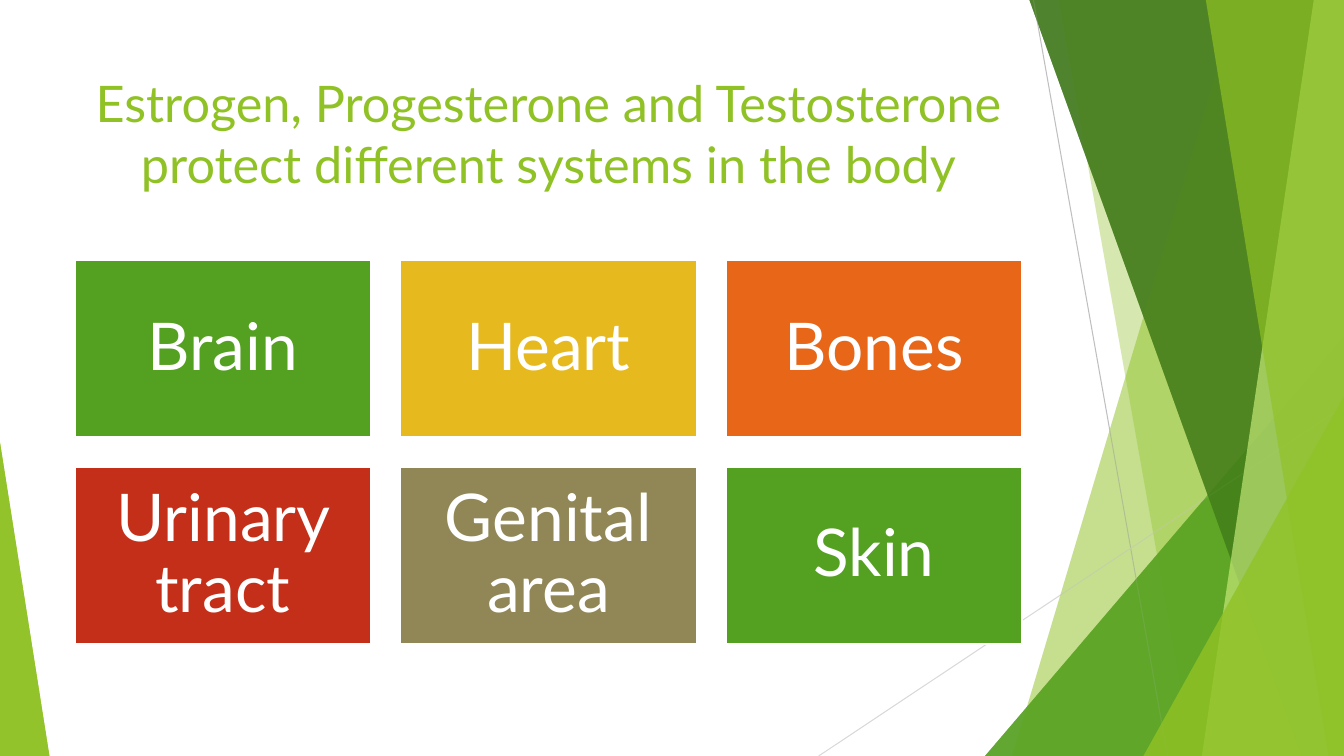
from lxml.etree import SubElement
from pptx import Presentation
from pptx.dml.color import RGBColor
from pptx.enum.shapes import MSO_CONNECTOR, MSO_SHAPE
from pptx.enum.text import MSO_ANCHOR, MSO_AUTO_SIZE, PP_ALIGN
from pptx.oxml.ns import qn
from pptx.util import Inches, Pt

COLORS = {
    "lime": "90C226", "green": "54A021", "forest": "3F7819", "pale": "C0E474",
    "gold": "E6B91E", "orange": "E76618", "red": "C42F1A", "olive": "918655",
    "white": "FFFFFF", "gray": "BFBFBF", "silver": "D9D9D9",
}
FONT = "Lato"
WIDTH, HEIGHT = 13.33, 7.5
BANDS = [
    ("band", 12.28, 10.04, "lime", 30),
    ("band", 10.5, 11.83, "lime", 20),
    ("triangle", (9.77, 3.33, 3.56, 4.17), 1, "green", 72),
    ("band", 10.21, 12.91, "forest", 70),
    ("band", 13.03, 11.92, "pale", 70),
    ("band", 11.96, 13.18, "lime", 65),
    ("triangle", (11.34, 3.93, 1.99, 3.57), 1, "lime", 80),
    ("triangle", (0, 4.39, 0.49, 3.11), 0, "lime", 85),
]
RAYS = [(10.25, 0, 11.58, 7.5, "gray"), (13.33, 4.03, 8.12, 7.5, "silver")]
CARDS = [
    ("Brain", "green"), ("Heart", "gold"), ("Bones", "orange"),
    ("Urinary tract", "red"), ("Genital area", "olive"), ("Skin", "green"),
]


def rgb(name):
    return RGBColor.from_string(COLORS[name])


def add_band(s, x, y, w, h, top_x, bottom_x):
    fb = s.shapes.build_freeform(Inches(x + top_x), Inches(y))
    corners = [(x + w, y), (x + w, y + h), (x + bottom_x, y + h)]
    fb.add_line_segments([(Inches(a), Inches(b)) for a, b in corners])
    return fb.convert_to_shape()


def add_triangle(s, x, y, box, apex):
    left, top, w, h = box
    sp = s.shapes.add_shape(MSO_SHAPE.ISOSCELES_TRIANGLE, Inches(x + left),
                            Inches(y + top), Inches(w), Inches(h))
    sp.adjustments[0] = apex
    return sp


def add_facets(s, x, y, w, h):
    for kind, start, end, color, opacity in BANDS:
        if kind == "band":
            sp = add_band(s, x, y, w, h, start, end)
        else:
            sp = add_triangle(s, x, y, start, end)
        sp.shadow.inherit = False
        sp.line.fill.background()
        sp.fill.solid()
        sp.fill.fore_color.rgb = rgb(color)
        clr = sp.fill._xPr.find(qn("a:solidFill"))[0]
        SubElement(clr, qn("a:alpha"), val=str(opacity * 1000))


def add_rays(s, x, y):
    for x1, y1, x2, y2, color in RAYS:
        ray = s.shapes.add_connector(MSO_CONNECTOR.STRAIGHT, Inches(x + x1), Inches(y + y1),
                                     Inches(x + x2), Inches(y + y2))
        ray.line.color.rgb = rgb(color)
        ray.line.width = Pt(0.75)
        SubElement(ray._element.spPr, qn("a:effectLst"))


def style_text(p, size, color):
    p.alignment = PP_ALIGN.CENTER
    p.font.name = FONT
    p.font.size = Pt(size)
    p.font.color.rgb = rgb(color)


def add_title(s, x, y, w, h):
    title = s.shapes.title
    title.left, title.top, title.width, title.height = map(Inches, (x, y, w, h))
    tf = title.text_frame
    tf.text = "Estrogen, Progesterone and Testosterone protect different systems in the body"
    tf.word_wrap = True
    tf.auto_size = MSO_AUTO_SIZE.NONE
    tf.vertical_anchor = MSO_ANCHOR.TOP
    style_text(tf.paragraphs[0], 36, "lime")


def add_cards(s, x, y, w, h, cols=3, gap=0.29):
    rows = len(CARDS) // cols
    card_w = (w - (cols - 1) * gap) / cols
    card_h = (h - (rows - 1) * gap) / rows
    for i, (label, color) in enumerate(CARDS):
        row, col = divmod(i, cols)
        sp = s.shapes.add_shape(MSO_SHAPE.RECTANGLE, Inches(x + col * (card_w + gap)),
                                Inches(y + row * (card_h + gap)), Inches(card_w), Inches(card_h))
        sp.shadow.inherit = False
        sp.fill.solid()
        sp.fill.fore_color.rgb = rgb(color)
        sp.line.color.rgb = rgb("white")
        sp.line.width = Pt(1.5)
        tf = sp.text_frame
        tf.text = label
        tf.word_wrap = True
        tf.vertical_anchor = MSO_ANCHOR.MIDDLE
        tf.margin_left = tf.margin_right = tf.margin_top = tf.margin_bottom = Inches(0.2)
        p = tf.paragraphs[0]
        style_text(p, 47, "white")
        p.line_spacing = 0.9


def main():
    prs = Presentation()
    prs.slide_width, prs.slide_height = Inches(WIDTH), Inches(HEIGHT)
    s = prs.slides.add_slide(prs.slide_layouts[5])
    add_facets(s, 0, 0, WIDTH, HEIGHT)
    add_rays(s, 0, 0)
    add_facets(s, 0, 0, WIDTH, HEIGHT)
    add_title(s, 0.74, 0.67, 9.4, 1.44)
    add_cards(s, 0.74, 2.58, 9.4, 3.81)
    prs.save("out.pptx")


if __name__ == "__main__":
    main()
